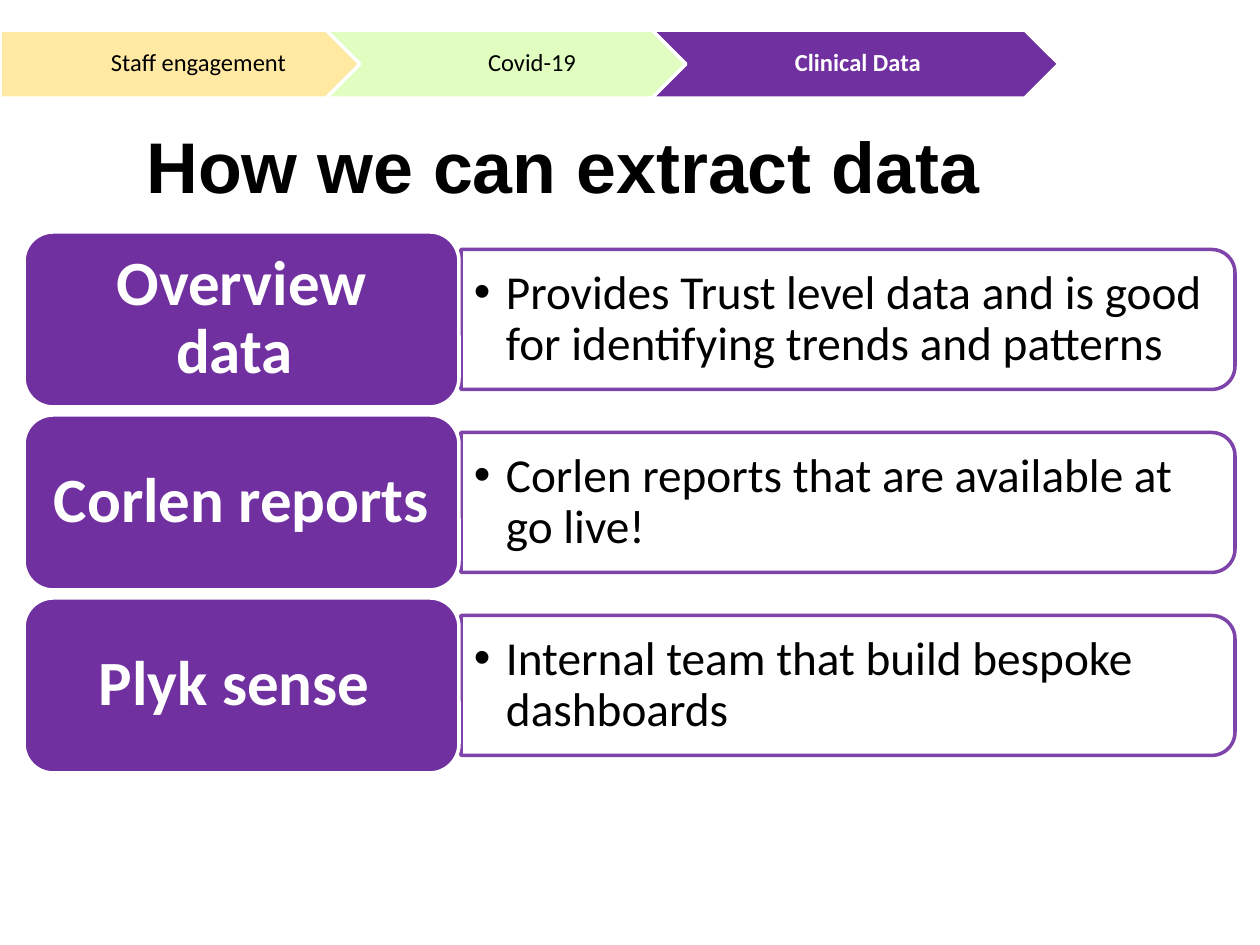
"""Build the slide on how data can be extracted."""
from dataclasses import dataclass

from lxml import etree
from pptx import Presentation
from pptx.dml.color import RGBColor
from pptx.enum.shapes import MSO_SHAPE
from pptx.enum.text import MSO_ANCHOR, MSO_AUTO_SIZE, PP_ALIGN
from pptx.oxml.ns import qn
from pptx.util import Emu, Pt

PENTAGON, CHEVRON = MSO_SHAPE.PENTAGON, MSO_SHAPE.CHEVRON
ROUNDED, ROUND_TOP = MSO_SHAPE.ROUNDED_RECTANGLE, MSO_SHAPE.ROUND_2_SAME_RECTANGLE
CENTER, LEFT = PP_ALIGN.CENTER, PP_ALIGN.LEFT
MIDDLE = MSO_ANCHOR.MIDDLE
NO_FIT = MSO_AUTO_SIZE.NONE
SCALE = 914400 / 126


@dataclass(frozen=True)
class Theme:
    purple: str = "7030A0"
    yellow: str = "FFE9A3"
    green: str = "E1FEC0"
    white: str = "FFFFFF"
    black: str = "000000"
    heading: str = "Arial"
    body: str = "Calibri"
    title_size: int = 41
    label_size: int = 36
    text_size: int = 27
    step_size: int = 14
    line_width: int = 2


theme = Theme()


def px(*values):
    return [Emu(round(v * SCALE)) for v in values]


def write(sp, text, *, size, color=theme.black, font=theme.body, bold=False,
          align=CENTER, insets=(0, 0, 0, 0), spacing=0.9, bullet=False):
    tf = sp.text_frame
    tf.word_wrap = True
    tf.auto_size = NO_FIT
    tf.vertical_anchor = MIDDLE
    tf.margin_left, tf.margin_top, tf.margin_right, tf.margin_bottom = px(*insets)
    p = tf.paragraphs[0]
    p.alignment = align
    p.line_spacing = spacing
    if bullet:
        p.level = 1
        pPr = p._p.get_or_add_pPr()
        indent = px(32)[0]
        pPr.set("marL", str(indent))
        pPr.set("indent", str(-indent))
        etree.SubElement(pPr, qn("a:buFont")).set("typeface", theme.heading)
        etree.SubElement(pPr, qn("a:buChar")).set("char", "•")
    r = p.add_run()
    r.text = text
    r.font.name = font
    r.font.size = Pt(size)
    r.font.bold = bold
    r.font.color.rgb = RGBColor.from_string(color)


prs = Presentation()
prs.slide_width, prs.slide_height = px(1260, 945)
s = prs.slides.add_slide(prs.slide_layouts[5])

title = s.shapes.title
title.left, title.top, title.width, title.height = px(31, 117, 1085, 102)
write(title, "How we can extract data ", size=theme.title_size, font=theme.heading,
      bold=True, insets=(0, 0, 0, 6), spacing=1.0)

steps = [
    ("Staff engagement", PENTAGON, theme.yellow, theme.black, False, 10),
    ("Covid-19", CHEVRON, theme.green, theme.black, False, 8),
    ("Clinical Data", CHEVRON, theme.purple, theme.white, True, 8),
]
for i, (text, kind, fill, color, bold, inset) in enumerate(steps):
    sp = s.shapes.add_shape(kind, *px(326 * i, 30, 407, 68))
    sp.shadow.inherit = False
    sp.fill.solid()
    sp.fill.fore_color.rgb = RGBColor.from_string(fill)
    sp.line.color.rgb = RGBColor.from_string(theme.white)
    sp.line.width = Pt(theme.line_width)
    write(sp, text, size=theme.step_size, color=color, bold=bold, insets=(inset, 5, 3, 5))

sources = [
    ("Overview data ", "Provides Trust level data and is good for identifying trends and patterns"),
    ("Corlen reports ", "Corlen reports that are available at go live!"),
    ("Plyk sense ", "Internal team that build bespoke dashboards"),
]
LABEL_H, PANEL_W, PANEL_H, TEXT_H = 175, 774, 140, 126
for i, (name, detail) in enumerate(sources):
    top = 232 + (LABEL_H + 8) * i
    middle = top + LABEL_H / 2

    panel = s.shapes.add_shape(
        ROUND_TOP, *px(848 - PANEL_H / 2, middle - PANEL_W / 2, PANEL_H, PANEL_W))
    panel.rotation = 90
    panel.shadow.inherit = False
    panel.fill.background()
    panel.line.color.rgb = RGBColor.from_string(theme.purple)
    panel.line.width = Pt(theme.line_width)
    line_color = panel._element.spPr.find(qn("a:ln")).find(".//" + qn("a:srgbClr"))
    etree.SubElement(line_color, qn("a:alpha")).set("val", "90000")

    box = s.shapes.add_textbox(*px(460, middle - TEXT_H / 2, 767, TEXT_H))
    write(box, detail, size=theme.text_size, align=LEFT, insets=(14, 8, 14, 8), bullet=True)

    label = s.shapes.add_shape(ROUNDED, *px(24, top, 435, LABEL_H))
    label.shadow.inherit = False
    label.fill.solid()
    label.fill.fore_color.rgb = RGBColor.from_string(theme.purple)
    label.line.color.rgb = RGBColor.from_string(theme.white)
    label.line.width = Pt(theme.line_width)
    write(label, name, size=theme.label_size, color=theme.white, bold=True,
          insets=(19, 9, 19, 9))

prs.save("out.pptx")
